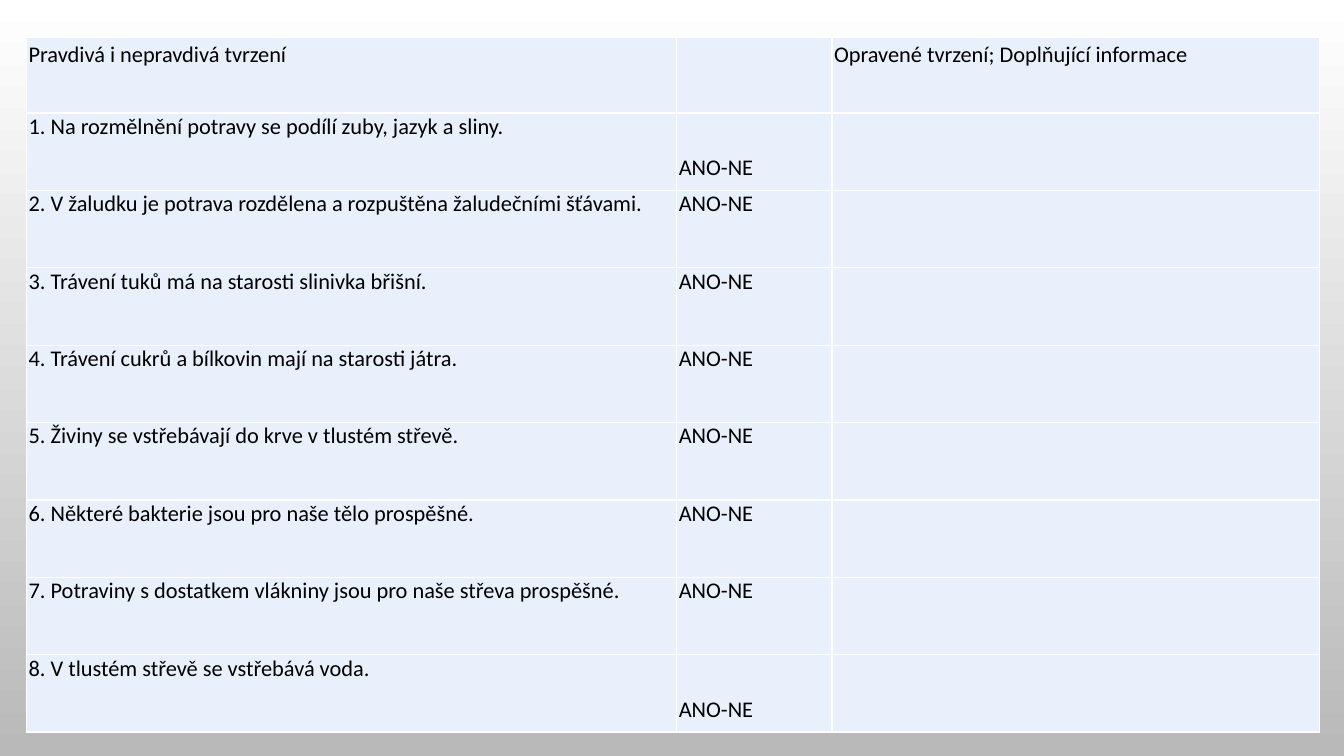
from lxml.etree import SubElement
from pptx import Presentation
from pptx.dml.color import RGBColor
from pptx.oxml.ns import qn
from pptx.util import Pt

COLORS = {"top": "FFFFFF", "bottom": "B9B9B9", "cell": "E8F0FC",
          "border": "FFFFFF", "text": "000000"}
FONT = "Calibri"
HEADER = ("Pravdivá i nepravdivá tvrzení", "", "Opravené tvrzení; Doplňující informace")
ANSWER = "ANO-NE"
STATEMENTS = [
    "1. Na rozmělnění potravy se podílí zuby, jazyk a sliny.",
    "2. V žaludku je potrava rozdělena a rozpuštěna žaludečními šťávami.",
    "3. Trávení tuků má na starosti slinivka břišní.",
    "4. Trávení cukrů a bílkovin mají na starosti játra.",
    "5. Živiny se vstřebávají do krve v tlustém střevě.",
    "6. Některé bakterie jsou pro naše tělo prospěšné.",
    "7. Potraviny s dostatkem vlákniny jsou pro naše střeva prospěšné.",
    "8. V tlustém střevě se vstřebává voda.",
]
LEFT, TOP = 19, 26.7
COLUMN_WIDTHS = (464.4, 110.9, 348.1)
HEADER_HEIGHT, ROW_HEIGHT = 54, 55.3
HEADER_SPACING, LOW_ANSWER_SPACING = 1.15, 2.5


def add_borders(cell):
    tc_pr = cell._tc.get_or_add_tcPr()
    for side in ("lnL", "lnR", "lnT", "lnB"):
        line = SubElement(tc_pr, qn(f"a:{side}"), w=str(Pt(1)))
        fill = SubElement(line, qn("a:solidFill"))
        SubElement(fill, qn("a:srgbClr"), val=COLORS["border"])


def fill_cell(cell, text, spacing):
    add_borders(cell)
    cell.fill.solid()
    cell.fill.fore_color.rgb = RGBColor.from_string(COLORS["cell"])
    cell.margin_left = cell.margin_right = Pt(1.5)
    cell.margin_top = cell.margin_bottom = Pt(0)
    cell.text = text
    p = cell.text_frame.paragraphs[0]
    p.line_spacing = spacing
    p.font.name = FONT
    p.font.size = Pt(16)
    p.font.bold = False
    p.font.color.rgb = RGBColor.from_string(COLORS["text"])


def line_spacing(row, col):
    if row == 0:
        return HEADER_SPACING
    if col == 1 and row in (1, len(STATEMENTS)):
        return LOW_ANSWER_SPACING
    return 1.0


def main():
    prs = Presentation()
    prs.slide_width, prs.slide_height = Pt(960), Pt(540)
    s = prs.slides.add_slide(prs.slide_layouts[6])

    background = s.background.fill
    background.gradient()
    background.gradient_angle = 270
    for stop, name in zip(background.gradient_stops, ("top", "bottom")):
        stop.color.rgb = RGBColor.from_string(COLORS[name])

    rows = [HEADER] + [(statement, ANSWER, "") for statement in STATEMENTS]
    heights = [HEADER_HEIGHT] + [ROW_HEIGHT] * len(STATEMENTS)
    table = s.shapes.add_table(len(rows), len(COLUMN_WIDTHS), Pt(LEFT), Pt(TOP),
                               Pt(sum(COLUMN_WIDTHS)), Pt(sum(heights))).table
    for column, width in zip(table.columns, COLUMN_WIDTHS):
        column.width = Pt(width)
    for i, (texts, height) in enumerate(zip(rows, heights)):
        table.rows[i].height = Pt(height)
        for j, text in enumerate(texts):
            fill_cell(table.cell(i, j), text, line_spacing(i, j))

    prs.save("out.pptx")


if __name__ == "__main__":
    main()
